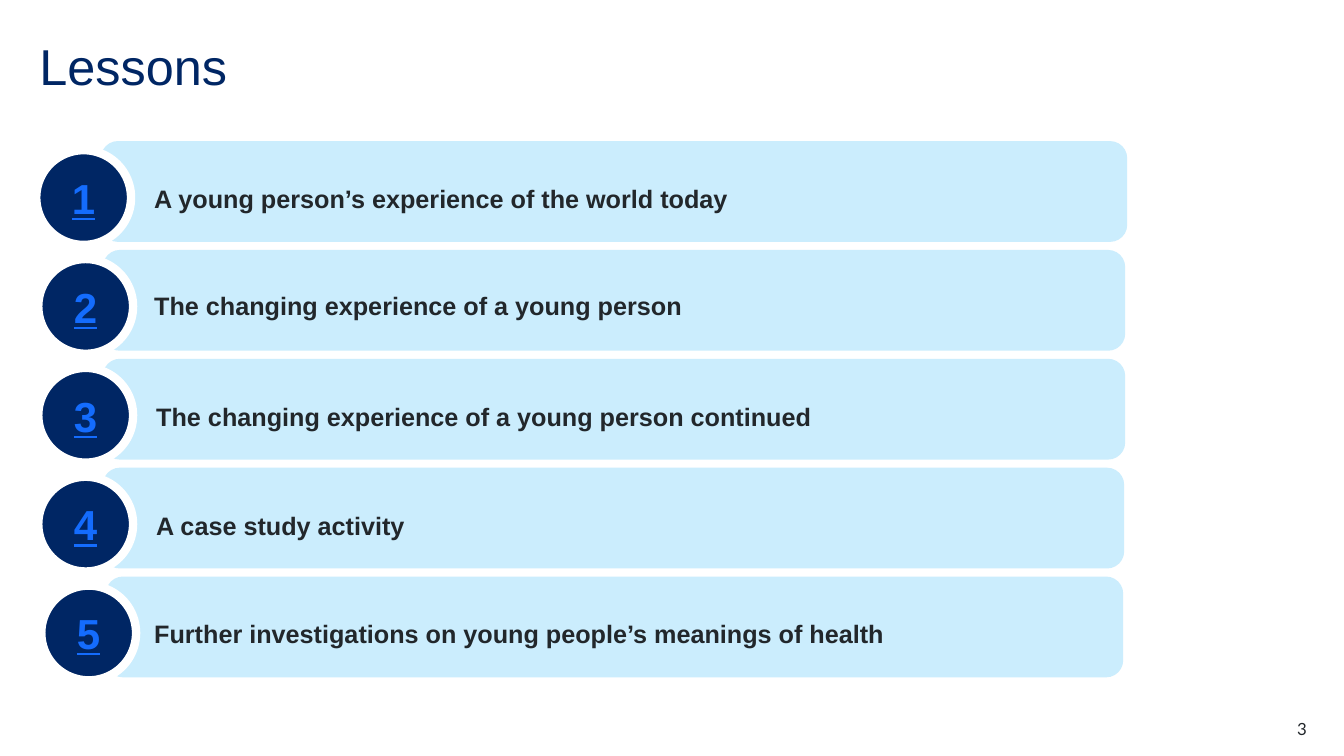
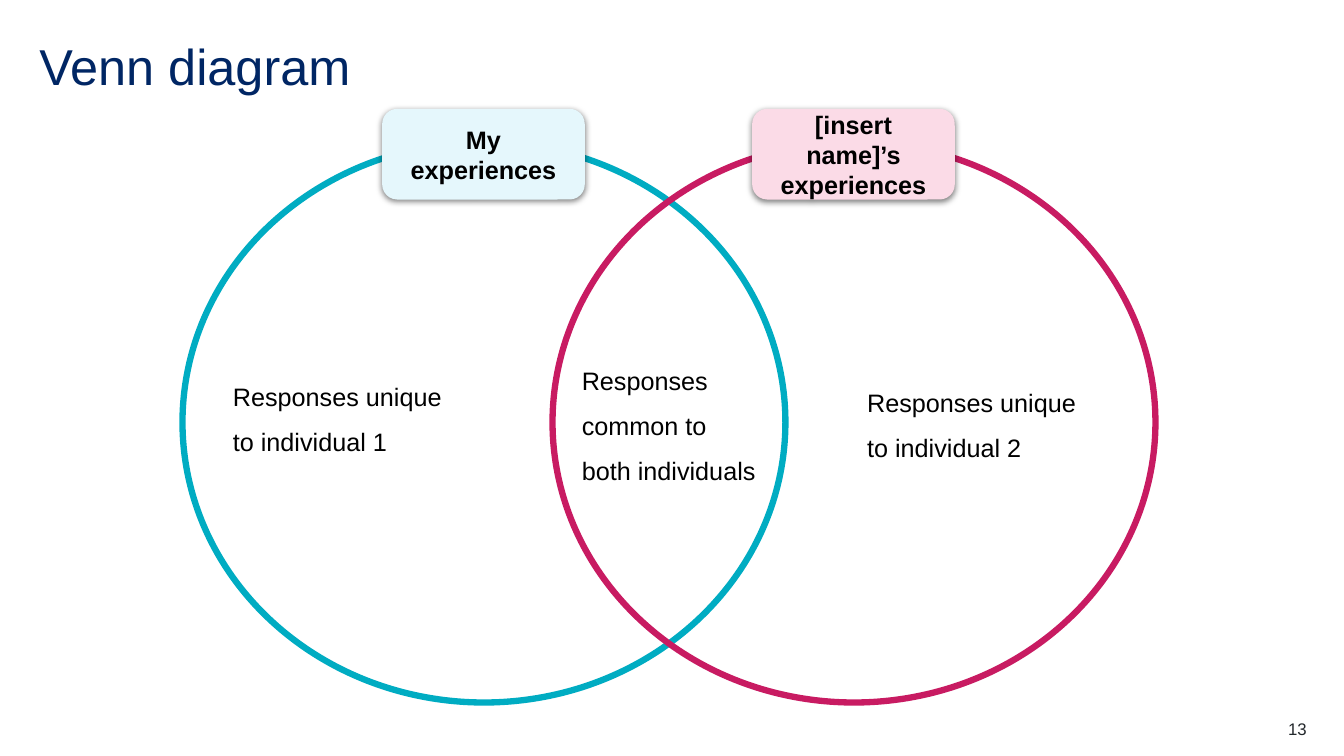
from dataclasses import dataclass

from lxml.etree import SubElement
from pptx import Presentation
from pptx.dml.color import RGBColor
from pptx.enum.shapes import MSO_SHAPE as Shape
from pptx.enum.text import MSO_ANCHOR as Anchor, PP_ALIGN as Align
from pptx.oxml.ns import qn
from pptx.util import Inches, Pt

COLORS = {
    "navy": "002664",
    "link": "146CFD",
    "ink": "22272B",
    "black": "000000",
    "white": "FFFFFF",
    "sky": "CBEDFD",
    "teal": "00ACC2",
    "ice": "E5F7FC",
    "rose": "C81B62",
    "pink": "FBDBE7",
}
FONT = "Arial"


@dataclass
class Box:
    left: float
    top: float
    width: float
    height: float

    def lengths(self) -> list:
        return [Inches(v) for v in (self.left, self.top, self.width, self.height)]


@dataclass
class Style:
    size: int
    color: str
    bold: bool = False
    line: bool = False
    font: str = FONT
    align: Align = Align.LEFT
    space: float = 1.0
    after: int = 0


@dataclass
class Lesson:
    text: str
    left: float
    width: float
    start: float
    drop: float


@dataclass
class Ring:
    left: float
    color: str
    fill: str
    label: str


@dataclass
class Note:
    text: str
    box: Box


TITLE = Style(36, "navy", space=0.9)
NUMBER = Style(30, "link", bold=True, line=True, align=Align.CENTER)
LESSON = Style(18, "ink", bold=True, space=1.5)
LABEL = Style(18, "black", bold=True, align=Align.CENTER)
NOTE = Style(18, "black", space=1.5, after=6)

LESSONS = [
    Lesson("A young person’s experience of the world today", 1, 10.18, 1.53, 0.27),
    Lesson("The changing experience of a young person", 1.02, 10.14, 1.53, 0.25),
    Lesson("The changing experience of a young person continued", 1.02, 10.14, 1.55, 0.27),
    Lesson("A case study activity", 1.02, 10.13, 1.55, 0.27),
    Lesson("Further investigations on young people’s meanings of health",
           1.05, 10.09, 1.53, 0.26),
]
RINGS = [
    Ring(1.81, "teal", "ice", "My experiences"),
    Ring(5.48, "rose", "pink", "[insert name]’s experiences"),
]
NOTES = [
    Note("Responses unique to individual 1", Box(2.18, 3.5, 2.47, 1.12)),
    Note("Responses common to both individuals", Box(5.64, 3.34, 2.01, 1.12)),
    Note("Responses unique to individual 2", Box(8.47, 3.56, 2.45, 0.9)),
]


def rgb(name: str) -> RGBColor:
    return RGBColor.from_string(COLORS[name])


# Text and shapes
def write(shape, text: str, style: Style, pad: tuple = (0, 0),
          anchor: Anchor = Anchor.TOP) -> None:
    frame = shape.text_frame
    frame.text = text
    frame.word_wrap = True
    frame.vertical_anchor = anchor
    frame.margin_left = frame.margin_right = Inches(pad[0])
    frame.margin_top = frame.margin_bottom = Inches(pad[1])
    for para in frame.paragraphs:
        para.alignment = style.align
        para.line_spacing = style.space
        para.space_before = Pt(0)
        para.space_after = Pt(style.after)
        for run in para.runs:
            font = run.font
            font.name = style.font
            font.size = Pt(style.size)
            font.bold = style.bold
            font.underline = style.line
            font.color.rgb = rgb(style.color)


def add_text(shapes, box: Box, text: str, style: Style, pad: tuple = (0, 0)) -> None:
    write(shapes.add_textbox(*box.lengths()), text, style, pad)


def add_form(shapes, kind: Shape, box: Box, fill: str = "",
             line: str = "", weight: float = 0):
    form = shapes.add_shape(kind, *box.lengths())
    form.shadow.inherit = False
    if fill:
        form.fill.solid()
        form.fill.fore_color.rgb = rgb(fill)
    else:
        form.fill.background()
    if line:
        form.line.color.rgb = rgb(line)
        form.line.width = Pt(weight)
    else:
        form.line.fill.background()
    return form


def add_shade(form) -> None:
    effects = form.element.spPr.find(qn("a:effectLst"))
    shade = SubElement(effects, qn("a:outerShdw"), blurRad=str(Pt(4.5)),
                       dist=str(Pt(1.5)), dir="5400000", rotWithShape="0")
    tint = SubElement(shade, qn("a:srgbClr"), val=COLORS["black"])
    SubElement(tint, qn("a:alpha"), val="50000")


# Title and page number
def add_page(deck, title: str, page: str, font: str = FONT):
    slide = deck.slides.add_slide(deck.slide_layouts[5])
    head = slide.shapes.title
    head.left, head.top, head.width, head.height = Box(0.39, 0.39, 12.56, 0.6).lengths()
    write(head, title, TITLE, anchor=Anchor.MIDDLE)
    style = Style(12, "ink", font=font, align=Align.RIGHT)
    add_text(slide.shapes, Box(12.17, 7.13, 0.79, 0.2), page, style)
    return slide


# One numbered lesson bar
def add_lesson(slide, index: int, lesson: Lesson) -> None:
    shapes = slide.shapes.add_group_shape().shapes
    top = 1.4 + 1.08 * index
    bar = add_form(shapes, Shape.ROUNDED_RECTANGLE,
                   Box(lesson.left, top, lesson.width, 1), "sky")
    bar.adjustments[0] = 0.17
    disc = add_form(shapes, Shape.OVAL, Box(lesson.left - 0.64, top + 0.09, 0.94, 0.94),
                    "navy", "white", 6)
    write(disc, str(index + 1), NUMBER, (0.1, 0.05), Anchor.MIDDLE)
    add_text(shapes, Box(lesson.start, top + lesson.drop, 8.2, 0.4), lesson.text, LESSON)


# One circle with its label
def add_ring(slide, ring: Ring) -> None:
    add_form(slide.shapes, Shape.OVAL, Box(ring.left, 1.41, 5.98, 5.56),
             line=ring.color, weight=4.5)
    tag = add_form(slide.shapes, Shape.ROUNDED_RECTANGLE,
                   Box(ring.left + 1.98, 1.08, 2.01, 0.9), ring.fill)
    add_shade(tag)
    write(tag, ring.label, LABEL, (0.09, 0.04), Anchor.MIDDLE)


def main() -> None:
    deck = Presentation()
    deck.slide_width, deck.slide_height = Inches(13.33), Inches(7.5)

    slide = add_page(deck, "Lessons", "3", "Lato")
    for index, lesson in enumerate(LESSONS):
        add_lesson(slide, index, lesson)

    slide = add_page(deck, "Venn diagram", "13")
    for ring in RINGS:
        add_ring(slide, ring)
    for note in NOTES:
        add_text(slide.shapes, note.box, note.text, NOTE, (0.13, 0.13))

    deck.save("out.pptx")


if __name__ == "__main__":
    main()
